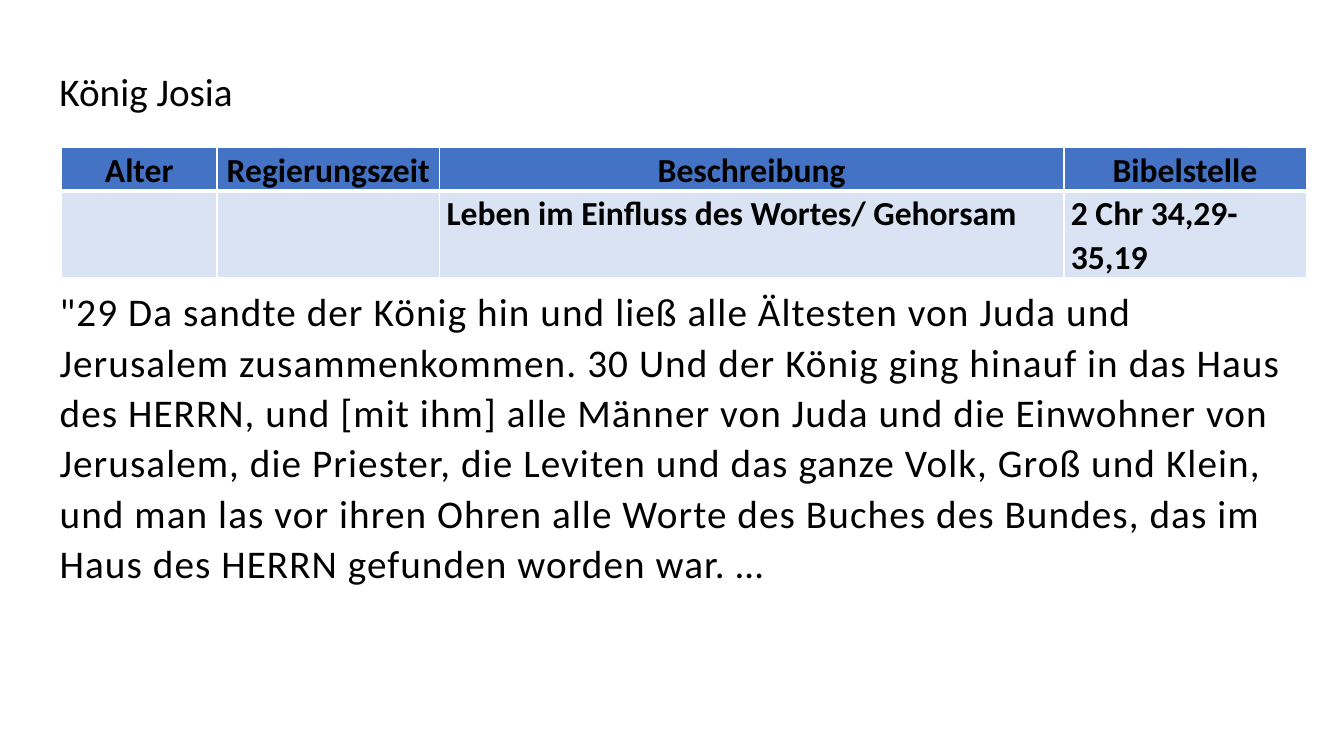
from lxml import etree
from pptx import Presentation
from pptx.dml.color import RGBColor
from pptx.enum.text import MSO_ANCHOR, MSO_AUTO_SIZE, PP_ALIGN
from pptx.oxml.ns import qn
from pptx.util import Pt

LEFT, CENTER = PP_ALIGN.LEFT, PP_ALIGN.CENTER
TOP = MSO_ANCHOR.TOP
GROW = MSO_AUTO_SIZE.SHAPE_TO_FIT_TEXT

BLACK, WHITE = "000000", "FFFFFF"
HEADER_BLUE, ROW_BLUE = "4472C4", "DAE3F3"

TITLE = "König Josia"
COLUMN_WIDTHS = [111, 159, 446, 173]
ROW_HEIGHTS = [30, 60]
ROWS = [
    ["Alter", "Regierungszeit", "Beschreibung", "Bibelstelle"],
    ["", "", "Leben im Einfluss des Wortes/ Gehorsam", "2 Chr 34,29-35,19"],
]
PASSAGE = (
    '"29 Da sandte der König hin und ließ alle Ältesten von Juda und '
    "Jerusalem zusammenkommen. 30 Und der König ging hinauf in das Haus "
    "des HERRN, und [mit ihm] alle Männer von Juda und die Einwohner von "
    "Jerusalem, die Priester, die Leviten und das ganze Volk, Groß und Klein, "
    "und man las vor ihren Ohren alle Worte des Buches des Bundes, das im "
    "Haus des HERRN gefunden worden war. …"
)


def color(value):
    return RGBColor.from_string(value)


class SlideBuilder:
    font_name = "Calibri"
    text_size = 28
    table_size = 24
    line_spacing = 1.07

    def __init__(self, slide):
        self.slide = slide

    def format_paragraph(self, paragraph, size, bold=False, align=LEFT, before=0, after=0):
        paragraph.alignment = align
        paragraph.line_spacing = self.line_spacing
        paragraph.space_before = Pt(before)
        paragraph.space_after = Pt(after)
        for run in paragraph.runs:
            run.font.name = self.font_name
            run.font.size = Pt(size)
            run.font.bold = bold
            run.font.color.rgb = color(BLACK)

    def fill_placeholder(self, shape, text, left, top, width, height, wrap=True, **spacing):
        shape.left, shape.top = Pt(left), Pt(top)
        shape.width, shape.height = Pt(width), Pt(height)
        frame = shape.text_frame
        frame.text = text
        frame.word_wrap = wrap
        frame.auto_size = GROW
        frame.vertical_anchor = TOP
        paragraph = frame.paragraphs[0]
        self.format_paragraph(paragraph, self.text_size, **spacing)
        return paragraph

    def title(self, text, left, top, width, height):
        self.fill_placeholder(self.slide.shapes.title, text, left, top, width, height,
                              wrap=False, before=12)

    def body(self, text, left, top, width, height, indent, tracking):
        paragraph = self.fill_placeholder(self.slide.placeholders[1], text,
                                          left, top, width, height, after=2)
        properties = paragraph._p.get_or_add_pPr()
        properties.set("marL", str(Pt(indent)))
        properties.set("indent", "0")
        etree.SubElement(properties, qn("a:buNone"))
        for run in paragraph.runs:
            run.font._element.set("spc", str(round(tracking * 100)))

    def borders(self, cell, top, bottom):
        properties = cell._tc.get_or_add_tcPr()
        for side, width in (("L", 1), ("R", 1), ("T", top), ("B", bottom)):
            line = etree.SubElement(properties, qn(f"a:ln{side}"), w=str(Pt(width)))
            fill = etree.SubElement(line, qn("a:solidFill"))
            etree.SubElement(fill, qn("a:srgbClr"), val=WHITE)

    def cell(self, cell, text, header):
        cell.margin_left = cell.margin_right = Pt(5)
        cell.margin_top = cell.margin_bottom = 0
        cell.text = text
        self.format_paragraph(cell.text_frame.paragraphs[0], self.table_size,
                              bold=True, align=CENTER if header else LEFT)
        self.borders(cell, *((1, 3) if header else (3, 1)))
        cell.fill.solid()
        cell.fill.fore_color.rgb = color(HEADER_BLUE if header else ROW_BLUE)

    def table(self, rows, left, top, widths, heights):
        table = self.slide.shapes.add_table(
            len(rows), len(widths), Pt(left), Pt(top),
            Pt(sum(widths)), Pt(sum(heights))).table
        for column, width in zip(table.columns, widths):
            column.width = Pt(width)
        for row_index, (texts, height) in enumerate(zip(rows, heights)):
            table.rows[row_index].height = Pt(height)
            for column_index, text in enumerate(texts):
                self.cell(table.cell(row_index, column_index), text, row_index == 0)


def main():
    presentation = Presentation()
    presentation.slide_width, presentation.slide_height = Pt(960), Pt(540)
    builder = SlideBuilder(presentation.slides.add_slide(presentation.slide_layouts[1]))
    builder.title(TITLE, 35.3, 41.8, 139.7, 41.8)
    builder.table(ROWS, 44, 105.5, COLUMN_WIDTHS, ROW_HEIGHTS)
    builder.body(PASSAGE, 0, 199.5, 932.5, 223, indent=35.4, tracking=0.8)
    presentation.save("out.pptx")


if __name__ == "__main__":
    main()
